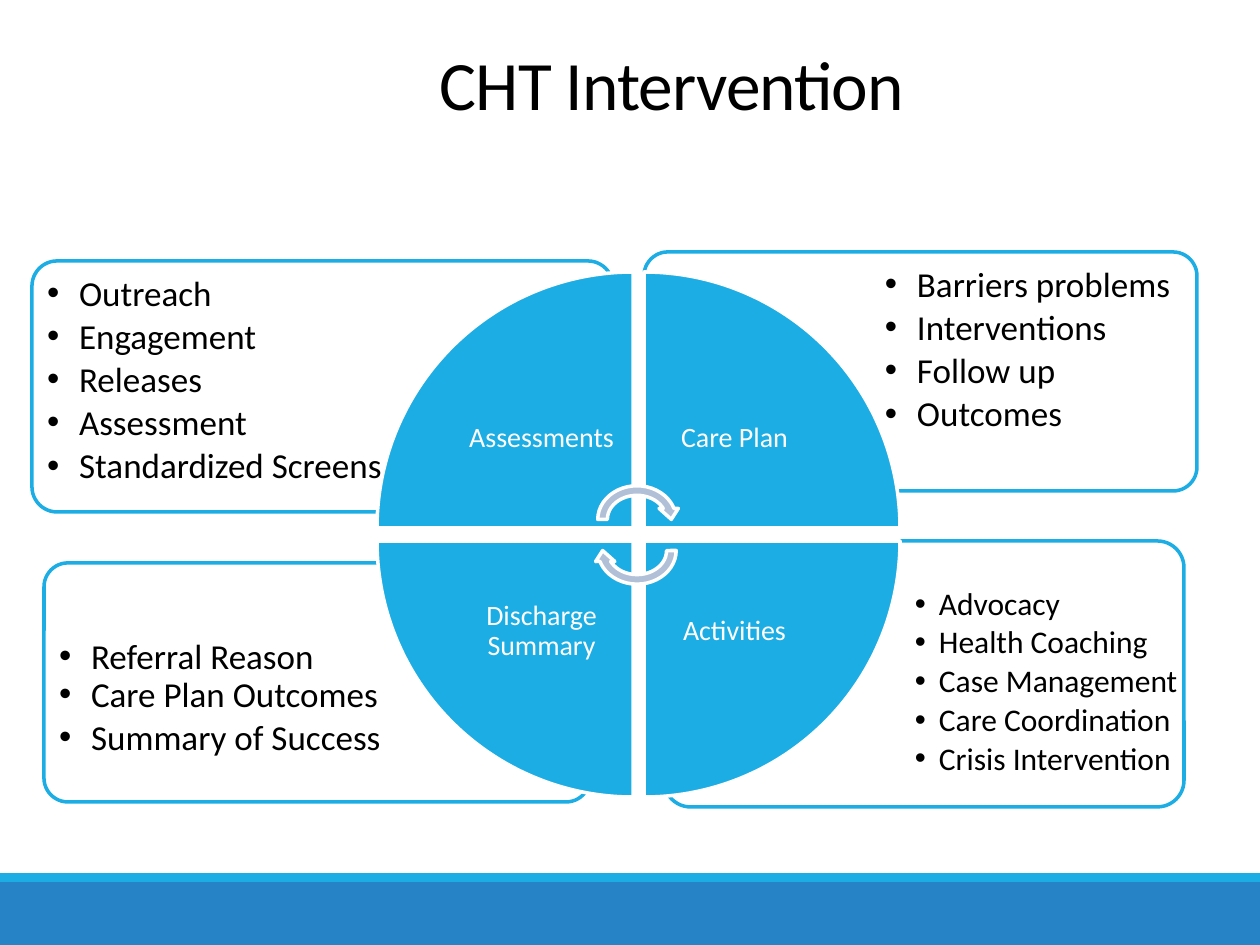
import pptx
import pptx.util
import pptx.dml.color
import pptx.enum.shapes
import pptx.enum.text
import pptx.oxml.ns
import lxml.etree

SCALE = 914400 / 126
FONT = "Calibri"
HUES = {"sky": "1CADE4", "blue": "2683C6", "haze": "B1C0D7",
        "white": "FFFFFF", "black": "000000"}
KIND = pptx.enum.shapes.MSO_SHAPE
ALIGN = pptx.enum.text.PP_ALIGN
ANCHOR = pptx.enum.text.MSO_ANCHOR
SIDE = 256
COLS = (377, 644)
ROWS = (272, 541)

CARDS = [
    {"card": (664, 541, 520, 266), "box": (827, 588, 353, 195),
     "inset": (88, 0, 0, 9), "size": 18, "dent": 24, "gap": 2.7, "tight": 1,
     "items": ["Advocacy", "Health Coaching", "Case Management",
               "Care Coordination", "Crisis Intervention"]},
    {"card": (44, 563, 546, 239), "box": (49, 629, 370, 169),
     "inset": (10, 10, 10, 10), "size": 20, "dent": 32, "gap": 3, "tight": 2,
     "items": ["Referral Reason", "Care Plan Outcomes", "Summary of Success"]},
    {"card": (644, 252, 553, 239), "box": (809, 257, 383, 169),
     "inset": (76, 10, 10, 10), "size": 20, "dent": 32, "gap": 3, "tight": 1,
     "items": ["Barriers problems", "Interventions", "Follow up", "Outcomes"]},
    {"card": (32, 261, 581, 251), "box": (37, 266, 396, 178),
     "inset": (10, 10, 10, 10), "size": 20, "dent": 32, "gap": 3, "tight": 1,
     "items": ["Outreach", "Engagement", "Releases", "Assessment",
               "Standardized Screens"]},
]
WEDGES = [("Assessments", 0, 0), ("Care Plan", 1, 0),
          ("Activities", 1, 1), ("Discharge Summary", 0, 1)]


def emu(px):
    """Turn px into EMU."""
    return pptx.util.Emu(round(px * SCALE))


def tint(hue):
    """Return the named colour."""
    return pptx.dml.color.RGBColor.from_string(HUES[hue])


def add_node(root, tag, **attrs):
    """Append a child element with attributes."""
    return lxml.etree.SubElement(root, pptx.oxml.ns.qn(tag), attrs)


def add_form(slide, kind, box, fill, edge=None, turn=0):
    """Add a filled preset shape, outlined if an edge colour is given."""
    form = slide.shapes.add_shape(kind, *map(emu, box))
    form.shadow.inherit = False
    form.rotation = turn
    form.fill.solid()
    form.fill.fore_color.rgb = tint(fill)
    if edge:
        form.line.color.rgb = tint(edge)
        form.line.width = pptx.util.Pt(2)
    else:
        form.line.fill.background()
    return form


def add_frame(slide, box, inset, anchor):
    """Add a wrapping text box and return its frame."""
    frame = slide.shapes.add_textbox(*map(emu, box)).text_frame
    frame.word_wrap = True
    frame.vertical_anchor = anchor
    (frame.margin_left, frame.margin_top,
     frame.margin_right, frame.margin_bottom) = map(emu, inset)
    return frame


def add_run(para, text, size, hue):
    """Add a styled run to a paragraph."""
    run = para.add_run()
    run.text = text
    run.font.name = FONT
    run.font.size = pptx.util.Pt(size)
    run.font.color.rgb = tint(hue)
    return run


def add_label(slide, text, box, inset, size, hue, space):
    """Add one centred line of text and return its run."""
    para = add_frame(slide, box, inset, ANCHOR.MIDDLE).paragraphs[0]
    para.alignment = ALIGN.CENTER
    para.line_spacing = space
    return add_run(para, text, size, hue)


def add_bullet(para, dent):
    """Give a paragraph a hanging bullet."""
    props = para._p.get_or_add_pPr()
    props.set("marL", str(emu(dent)))
    props.set("indent", str(-emu(dent)))
    add_node(add_node(props, "a:buClr"), "a:srgbClr", val=HUES["black"])
    add_node(props, "a:buFont", typeface="Arial")
    add_node(props, "a:buChar", char="•")


def add_card(slide, card):
    """Add a rounded card with its bullet list."""
    form = add_form(slide, KIND.ROUNDED_RECTANGLE, card["card"], "white", "sky")
    form.adjustments[0] = 0.1
    color = form.fill._xPr.find(".//" + pptx.oxml.ns.qn("a:srgbClr"))
    add_node(color, "a:alpha", val="90000")
    frame = add_frame(slide, card["box"], card["inset"], ANCHOR.TOP)
    for rank, item in enumerate(card["items"]):
        para = frame.add_paragraph() if rank else frame.paragraphs[0]
        para.line_spacing = 0.9
        para.space_before = pptx.util.Pt(
            card["gap"] if rank >= card["tight"] else 0)
        add_bullet(para, card["dent"])
        add_run(para, item, card["size"], "black")


def add_wheel(slide):
    """Add the four wedges, their labels and the two turning arrows."""
    for rank, (text, col, row) in enumerate(WEDGES):
        add_form(slide, KIND.PIE_WEDGE, (COLS[col], ROWS[row], SIDE, SIDE),
                 "sky", "white", 90 * rank)
        box = ((451, 644)[col], (348, 541)[row], 181, 181)
        add_label(slide, text, box, (15,) * 4, 16, "white", 0.9)
    for top, turn in ((481, 0), (512, 180)):
        add_form(slide, KIND.CIRCULAR_ARROW, (593, top, 88, 77),
                 "haze", "white", turn)


def main():
    """Build and save the slide."""
    deck = pptx.Presentation()
    deck.slide_width, deck.slide_height = emu(1260), emu(945)
    slide = deck.slides.add_slide(deck.slide_layouts[6])
    add_form(slide, KIND.RECTANGLE, (0, 882, 1260, 63), "blue")
    add_form(slide, KIND.RECTANGLE, (0, 873, 1260, 9), "sky")
    title = add_label(slide, "CHT Intervention", (105, 10, 1134, 158),
                      (13, 6, 13, 6), 39.6, "black", 0.85)
    title._r.get_or_add_rPr().set("spc", "-50")
    for card in CARDS:
        add_card(slide, card)
    add_wheel(slide)
    deck.save("out.pptx")


if __name__ == "__main__":
    main()
